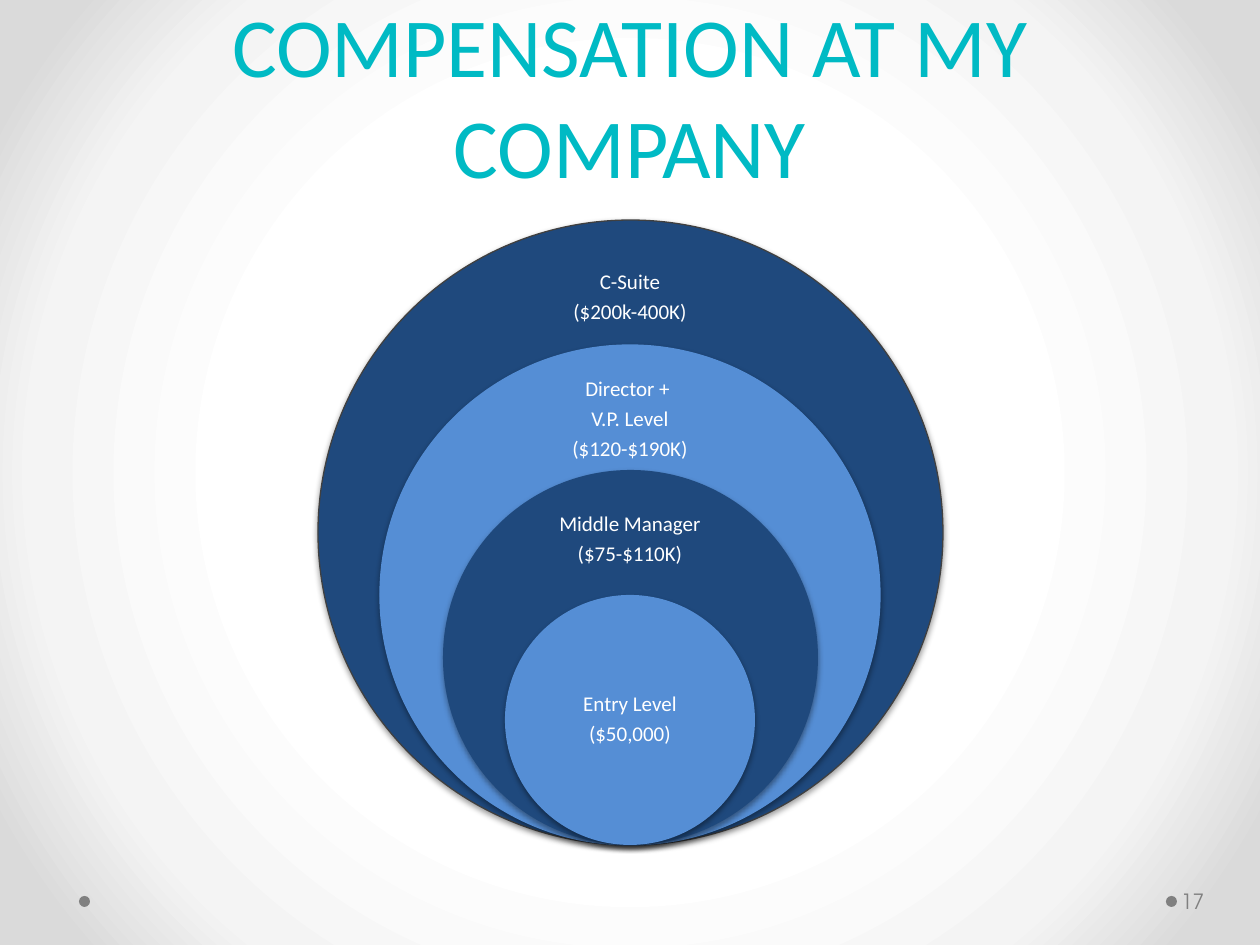
import pptx
import pptx.dml.color
import pptx.enum.shapes
import pptx.enum.text
import pptx.oxml
import pptx.oxml.ns
import pptx.util

PX = 914400 // 126
ANCHOR = pptx.enum.text.MSO_ANCHOR
ALIGN = pptx.enum.text.PP_ALIGN
OVAL = pptx.enum.shapes.MSO_SHAPE.OVAL
NS = pptx.oxml.ns.nsdecls("a", "p")

prs = pptx.Presentation()
prs.slide_width = pptx.util.Inches(10)
prs.slide_height = pptx.util.Inches(7.5)
slide = prs.slides.add_slide(prs.slide_layouts[6])


def add_circle(left, top, diameter, fill):
    circle = slide.shapes.add_shape(OVAL, left * PX, top * PX, diameter * PX, diameter * PX)
    circle.shadow.inherit = False
    circle.fill.solid()
    circle.fill.fore_color.rgb = pptx.dml.color.RGBColor.from_string(fill)
    circle.line.fill.background()
    return circle


def add_text(box, lines, size, color, anchor, align=ALIGN.CENTER, font="Calibri"):
    """Place lines of text in a box given as left, top, width, height; return the frame."""
    frame = slide.shapes.add_textbox(*(side * PX for side in box)).text_frame
    frame.word_wrap = True
    frame.vertical_anchor = anchor
    frame.text = "\n".join(lines)
    for paragraph in frame.paragraphs:
        paragraph.alignment = align
        for run in paragraph.runs:
            run.font.size = pptx.util.Pt(size)
            run.font.name = font
            run.font.color.rgb = pptx.dml.color.RGBColor.from_string(color)
    return frame


# Background: white centre fading to grey corners
stops = "".join(
    f'<a:gs pos="{position}000"><a:srgbClr val="{color}"/></a:gs>'
    for position, color in [(50, "FFFFFF"), (76, "F4F4F4"), (92, "DADADA")]
)
slide.element.cSld.insert(0, pptx.oxml.parse_xml(
    f'<p:bg {NS}><p:bgPr><a:gradFill rotWithShape="1"><a:gsLst>{stops}</a:gsLst>'
    '<a:path path="circle"><a:fillToRect l="50000" t="50000" r="50000" b="50000"/></a:path>'
    '</a:gradFill><a:effectLst/></p:bgPr></p:bg>'
))

# Footer dots
for dot_left in (1166, 79):
    add_circle(dot_left, 896, 11, "808080")

# Title
title = add_text((63, 19, 1134, 183), ["COMPENSATION AT MY COMPANY"], 48, "00BAC4", ANCHOR.BOTTOM)
title.paragraphs[0].line_spacing = pptx.util.Pt(58)

# Nested pay levels, resting on a shared base: lines, label centre, fill, outline
CENTER_X, BASE_Y, STEP = 630, 845, 125
levels = [
    (["C-Suite", "($200k-400K)"], 298, "1F497D", "404040"),
    (["Director + ", "V.P. Level", "($120-$190K)"], 420, "558ED5", "558ED5"),
    (["Middle Manager", "($75-$110K)"], 540, "1F497D", None),
    (["Entry Level", "($50,000)"], 720, "558ED5", None),
]
for index, (lines, label_y, fill, outline) in enumerate(levels):
    diameter = STEP * (len(levels) + 1 - index)
    level = add_circle(CENTER_X - diameter // 2, BASE_Y - diameter, diameter, fill)
    if outline:
        level.line.color.rgb = pptx.dml.color.RGBColor.from_string(outline)
        level.line.width = pptx.util.Pt(0.75)
    level.element.spPr.find(pptx.oxml.ns.qn("a:effectLst")).append(pptx.oxml.parse_xml(
        f'<a:outerShdw {NS} blurRad="40000" dist="20000" dir="5400000" rotWithShape="0">'
        '<a:srgbClr val="000000"><a:alpha val="38000"/></a:srgbClr></a:outerShdw>'
    ))
    label = add_text((CENTER_X - 100, label_y - 50, 200, 100), lines, 12, "FFFFFF", ANCHOR.MIDDLE)
    label.margin_top = label.margin_bottom = 0
    for paragraph in label.paragraphs:
        paragraph.line_spacing = 0.9
        paragraph.space_after = pptx.util.Pt(4.2)

# Slide number
number = add_text((1177, 876, 77, 50), ["17"], 12, "808080", ANCHOR.MIDDLE,
                  ALIGN.LEFT, "TeX Gyre Adventor")
number.margin_left = 4 * PX
number.margin_right = 6 * PX

prs.save("out.pptx")
